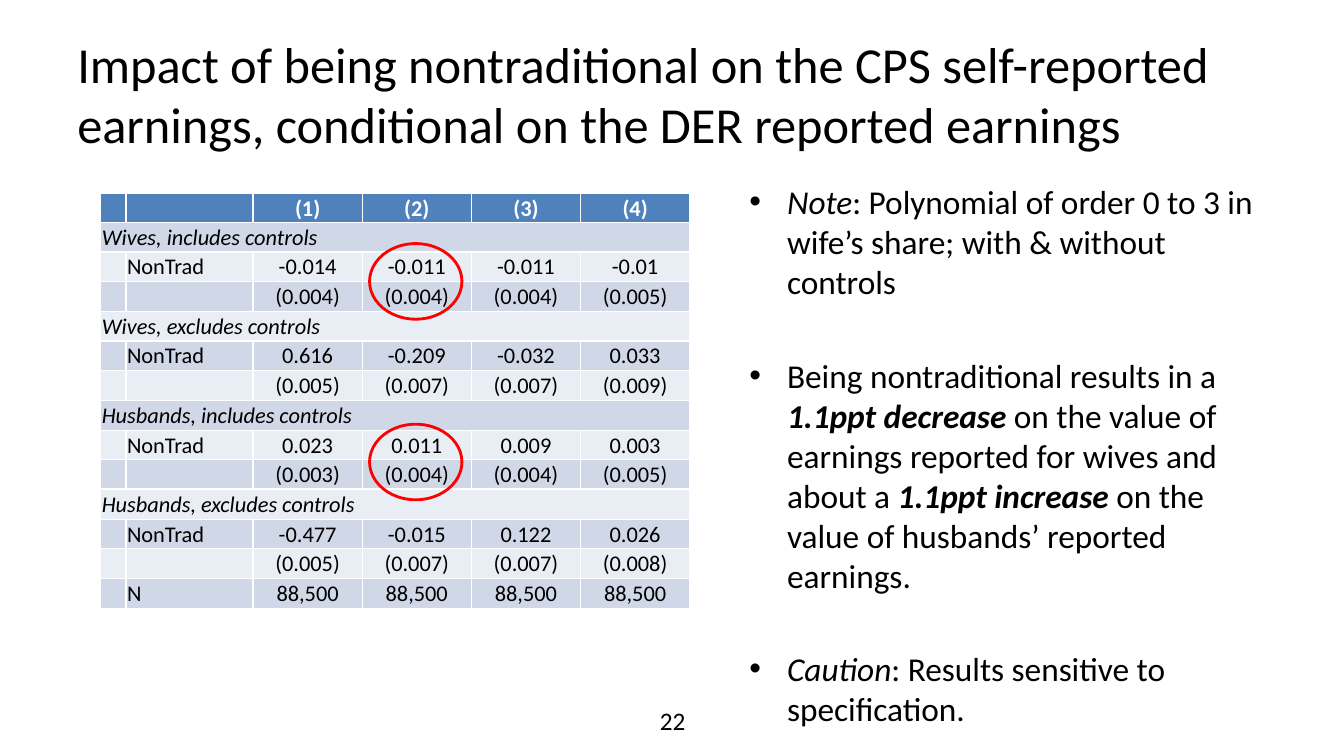
"""Build the slide on nontraditional couples and self-reported earnings."""
from dataclasses import dataclass
from typing import NamedTuple

from lxml.etree import SubElement
from pptx import Presentation
from pptx.dml.color import RGBColor
from pptx.enum.shapes import MSO_SHAPE as Preset
from pptx.enum.text import MSO_ANCHOR as Anchor, MSO_AUTO_SIZE as AutoSize, PP_ALIGN as Align
from pptx.oxml.ns import qn
from pptx.util import Pt

EMU_PER_PX = 9525
FONT = "Calibri"
COLORS = {
    "text": "000000",
    "header_text": "FFFFFF",
    "header": "4F81BD",
    "band_dark": "D0D8E8",
    "band_light": "E9EDF4",
    "highlight": "FF0000",
}


class Area(NamedTuple):
    left: int
    top: int
    width: int
    height: int


@dataclass(frozen=True)
class Span:
    text: str
    bold: bool = False
    italic: bool = False


TITLE = ("Impact of being nontraditional on the CPS self-reported earnings, "
         "conditional on the DER reported earnings")
TITLE_AREA = Area(64, 29, 1152, 120)
NOTES_AREA = Area(704, 168, 512, 440)
NUMBER_AREA = Area(491, 667, 299, 38)
TABLE_AREA = Area(96, 184, 561, 396)
COLUMN_WIDTHS = (24, 121, 104, 104, 104, 104)
HIGHLIGHTS = (Area(352, 232, 88, 72), Area(352, 404, 88, 72))

NOTES = (
    (Span("Note", italic=True),
     Span(": Polynomial of order 0 to 3 in wife’s share; with & without controls")),
    (Span("Being nontraditional results in a "),
     Span("1.1ppt decrease ", bold=True, italic=True),
     Span("on the value of earnings reported for wives and about a "),
     Span("1.1ppt increase ", bold=True, italic=True),
     Span("on the value of husbands’ reported earnings.")),
    (Span("Caution", italic=True), Span(": Results sensitive to specification.")),
)

ROWS = (
    ("", "", "(1)", "(2)", "(3)", "(4)"),
    ("Wives, includes controls",),
    ("", "NonTrad", "-0.014", "-0.011", "-0.011", "-0.01"),
    ("", "", "(0.004)", "(0.004)", "(0.004)", "(0.005)"),
    ("Wives, excludes controls",),
    ("", "NonTrad", "0.616", "-0.209", "-0.032", "0.033"),
    ("", "", "(0.005)", "(0.007)", "(0.007)", "(0.009)"),
    ("Husbands, includes controls",),
    ("", "NonTrad", "0.023", "0.011", "0.009", "0.003"),
    ("", "", "(0.003)", "(0.004)", "(0.004)", "(0.005)"),
    ("Husbands, excludes controls",),
    ("", "NonTrad", "-0.477", "-0.015", "0.122", "0.026"),
    ("", "", "(0.005)", "(0.007)", "(0.007)", "(0.008)"),
    ("", "N", "88,500", "88,500", "88,500", "88,500"),
)


def px(length: int) -> int:
    return length * EMU_PER_PX


def emu(area: Area) -> tuple[int, ...]:
    return tuple(px(length) for length in area)


def color(name: str) -> RGBColor:
    return RGBColor.from_string(COLORS[name])


def place(box, area: Area) -> None:
    box.left, box.top, box.width, box.height = emu(area)


def style(paragraph, size: float, align: Align = Align.LEFT, color_name: str = "text") -> None:
    paragraph.alignment = align
    paragraph.font.name = FONT
    paragraph.font.size = Pt(size)
    paragraph.font.color.rgb = color(color_name)


def fill_title(box) -> None:
    place(box, TITLE_AREA)
    box.text_frame.text = TITLE
    box.text_frame.auto_size = AutoSize.NONE
    box.text_frame.vertical_anchor = Anchor.MIDDLE
    style(box.text_frame.paragraphs[0], 36)


def fill_notes(box) -> None:
    place(box, NOTES_AREA)
    frame = box.text_frame
    frame.auto_size = AutoSize.NONE
    for index, spans in enumerate(NOTES):
        paragraph = frame.add_paragraph() if index else frame.paragraphs[0]
        paragraph.space_before = Pt(38 if index else 0)
        style(paragraph, 23.8)
        for span in spans:
            run = paragraph.add_run()
            run.text = span.text
            run.font.bold = span.bold
            run.font.italic = span.italic


def add_page_number(page) -> None:
    frame = page.shapes.add_textbox(*emu(NUMBER_AREA)).text_frame
    frame.word_wrap = True
    frame.text = "22"
    style(frame.paragraphs[0], 18, Align.CENTER)


def fill_cell(cell, text: str, fill: str, column: int, header: bool, section: bool) -> None:
    cell.fill.solid()
    cell.fill.fore_color.rgb = color(fill)
    cell.vertical_anchor = Anchor.MIDDLE
    cell.margin_left = cell.margin_top = cell.margin_right = px(1)
    cell.margin_bottom = 0
    cell.text = text
    paragraph = cell.text_frame.paragraphs[0]
    style(paragraph, 16, Align.CENTER if column > 1 else Align.LEFT,
          "header_text" if header else "text")
    paragraph.font.bold = header
    paragraph.font.italic = section
    if not text:
        SubElement(paragraph._p, qn("a:endParaRPr"), sz="1600")


def add_results(page) -> None:
    count = len(ROWS)
    table = page.shapes.add_table(count, len(COLUMN_WIDTHS), *emu(TABLE_AREA)).table
    for column, width in zip(table.columns, COLUMN_WIDTHS):
        column.width = px(width)
    for index, values in enumerate(ROWS):
        top, bottom = (TABLE_AREA.height * step // count for step in (index, index + 1))
        table.rows[index].height = px(bottom - top)
        header, section = index == 0, len(values) == 1
        fill = "header" if header else "band_dark" if index % 2 else "band_light"
        if section:
            table.cell(index, 0).merge(table.cell(index, len(COLUMN_WIDTHS) - 1))
        for column in range(len(COLUMN_WIDTHS)):
            text = values[column] if column < len(values) else ""
            fill_cell(table.cell(index, column), text, fill, column, header, section)


def add_highlight(page, area: Area) -> None:
    ring = page.shapes.add_shape(Preset.OVAL, *emu(area))
    ring.shadow.inherit = False
    ring.fill.background()
    ring.line.color.rgb = color("highlight")
    ring.line.width = Pt(2)


def main() -> None:
    deck = Presentation()
    deck.slide_width, deck.slide_height = px(1280), px(720)
    page = deck.slides.add_slide(deck.slide_layouts[1])
    fill_title(page.shapes.title)
    fill_notes(page.placeholders[1])
    add_page_number(page)
    add_results(page)
    for area in HIGHLIGHTS:
        add_highlight(page, area)
    deck.save("out.pptx")


if __name__ == "__main__":
    main()
